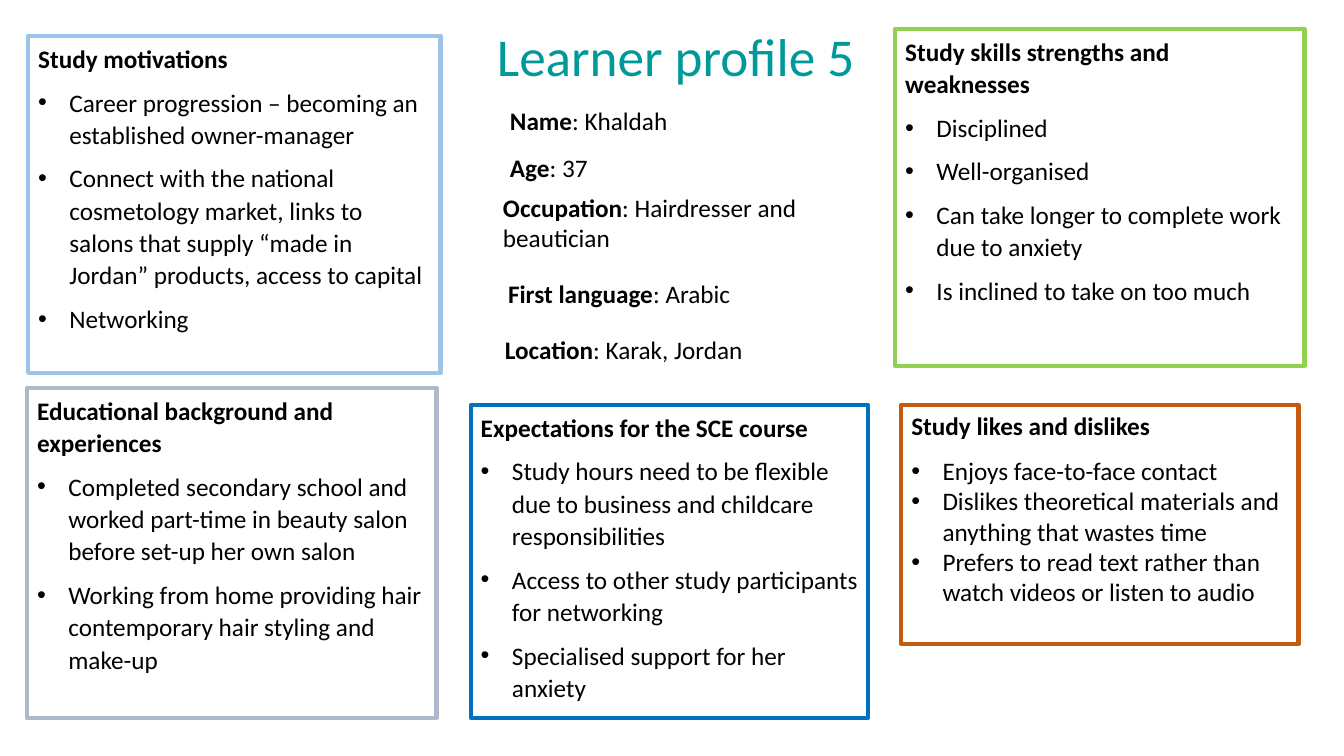
from lxml import etree
from pptx import Presentation
from pptx.dml.color import RGBColor
from pptx.enum.shapes import MSO_SHAPE
from pptx.enum.text import MSO_ANCHOR, MSO_AUTO_SIZE, PP_ALIGN
from pptx.oxml.ns import qn
from pptx.util import Inches, Pt

RECT = MSO_SHAPE.RECTANGLE
TOP = MSO_ANCHOR.TOP
LEFT = PP_ALIGN.LEFT
GROW = MSO_AUTO_SIZE.SHAPE_TO_FIT_TEXT

HUES = {
    "text": "000000",
    "white": "FFFFFF",
    "title": "009999",
    "hopes": "0070C0",
    "goals": "9DC3E6",
    "skills": "92D050",
    "school": "ADB9CA",
    "likes": "C55A11",
}


class Profile:
    """Draws the parts of a learner profile in one style."""

    face = "Calibri"
    size = 18
    indent = 0.31

    def __init__(self, slide):
        self.slide = slide

    def hue(self, name):
        return RGBColor.from_string(HUES[name])

    def style(self, para, bold=None, size=size, hue="text"):
        para.alignment = LEFT
        font = para.font
        font.name, font.size, font.bold = self.face, Pt(size), bold
        font.color.rgb = self.hue(hue)

    def bullet(self, para):
        props = para._p.get_or_add_pPr()
        props.set("marL", str(Inches(self.indent)))
        props.set("indent", str(-Inches(self.indent)))
        etree.SubElement(props, qn("a:buFont"), typeface="Arial")
        etree.SubElement(props, qn("a:buChar"), char="•")

    def panel(self, hue, place, head, items, lead=1.07, after=8, first=None):
        box = self.slide.shapes.add_shape(RECT, *map(Inches, place))
        box.shadow.inherit = False
        box.fill.solid()
        box.fill.fore_color.rgb = self.hue("white")
        box.line.color.rgb = self.hue(hue)
        box.line.width = Pt(3)
        frame = box.text_frame
        frame.word_wrap = True
        frame.vertical_anchor = TOP
        for i, text in enumerate([head] + items):
            para = frame.paragraphs[0] if i == 0 else frame.add_paragraph()
            para.text = text
            para.line_spacing = first if first and i == 1 else lead
            para.space_after = Pt(after)
            if i:
                self.bullet(para)
            self.style(para, bold=i == 0)

    def label(self, place, wrap=True):
        box = self.slide.shapes.add_textbox(*map(Inches, place))
        frame = box.text_frame
        frame.word_wrap = wrap
        frame.auto_size = GROW
        return frame.paragraphs[0]

    def fact(self, place, key, value):
        para = self.label(place)
        self.style(para)
        for text, bold in ((key, True), (": " + value, False)):
            run = para.add_run()
            run.text = text
            run.font.bold = bold

    def title(self, place, text):
        para = self.label(place, wrap=False)
        para.text = text
        para.line_spacing = 0.9
        para.space_before = Pt(10)
        self.style(para, size=38, hue="title")


def main():
    deck = Presentation()
    deck.slide_width, deck.slide_height = Inches(13.33), Inches(7.5)
    page = Profile(deck.slides.add_slide(deck.slide_layouts[6]))

    page.panel("hopes", (4.67, 4.02, 3.94, 3.1), "Expectations for the SCE course", [
        "Study hours need to be flexible due to business and childcare responsibilities",
        "Access to other study participants for networking",
        "Specialised support for her anxiety",
    ])
    page.panel("goals", (0.28, 0.36, 4.09, 3.34), "Study motivations", [
        "Career progression – becoming an established owner-manager",
        "Connect with the national cosmetology market, links to salons that supply "
        "“made in Jordan” products, access to capital",
        "Networking",
    ])
    page.panel("skills", (8.88, 0.29, 4.06, 3.34), "Study skills strengths and weaknesses", [
        "Disciplined",
        "Well-organised",
        "Can take longer to complete work due to anxiety",
        "Is inclined to take on too much",
    ])
    page.panel("school", (0.27, 3.85, 4.06, 3.27), "Educational background and experiences", [
        "Completed secondary school and worked part-time in beauty salon "
        "before set-up her own salon",
        "Working from home providing hair contemporary hair styling and make-up",
    ])
    page.panel("likes", (8.94, 4.02, 3.94, 2.37), "Study likes and dislikes", [
        "Enjoys face-to-face contact",
        "Dislikes theoretical materials and anything that wastes time",
        "Prefers to read text rather than watch videos or listen to audio",
    ], lead=1.0, after=0, first=1.5)

    page.title((4.83, 0.25, 3.79, 0.68), "Learner profile 5")
    page.fact((4.96, 1, 3.76, 0.4), "Name", "Khaldah")
    page.fact((4.96, 1.46, 3.17, 0.4), "Age", "37")
    page.fact((4.89, 1.86, 3.45, 0.71), "Occupation", "Hairdresser and beautician")
    page.fact((4.94, 2.71, 3.45, 0.4), "First language", "Arabic")
    page.fact((4.91, 3.27, 3.45, 0.4), "Location", "Karak, Jordan")

    deck.save("out.pptx")


if __name__ == "__main__":
    main()
